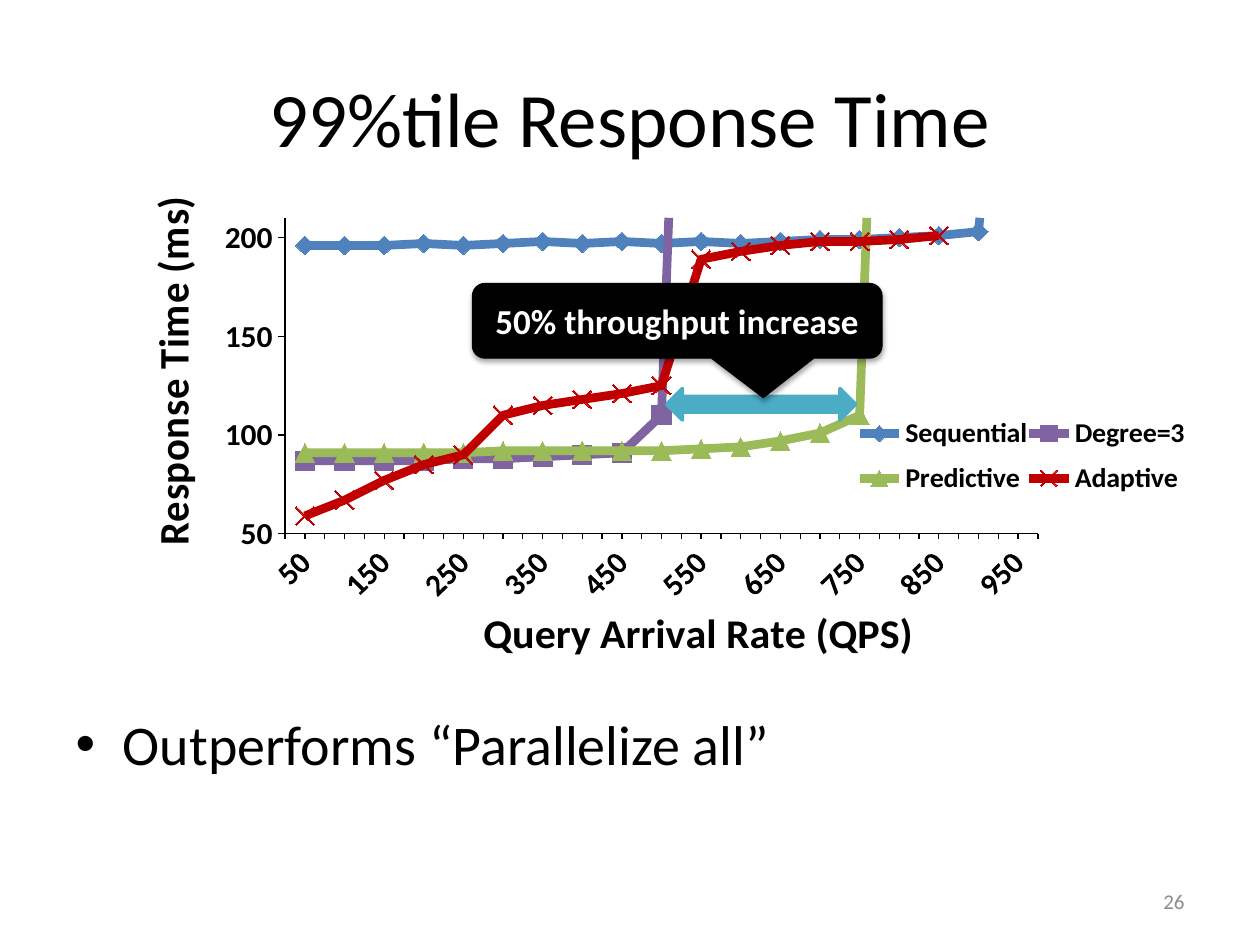
from lxml.etree import SubElement
from pptx import Presentation
from pptx.chart.data import CategoryChartData
from pptx.dml.color import RGBColor
from pptx.enum.chart import XL_CHART_TYPE, XL_LEGEND_POSITION, XL_MARKER_STYLE, XL_TICK_MARK
from pptx.enum.shapes import MSO_SHAPE
from pptx.enum.text import MSO_ANCHOR, PP_ALIGN
from pptx.oxml import parse_xml
from pptx.oxml.ns import nsdecls, qn
from pptx.util import Inches, Pt

rgb = RGBColor.from_string


def cells(*counts):
    """Turn counts of grid cells, twelve to the inch, into lengths."""
    return [Inches(n / 12) for n in counts]


def set_layout(element, index, **shares):
    """Place a chart part by shares of the chart's size."""
    for old in element.findall(qn("c:layout")):
        element.remove(old)
    layout = parse_xml(f"<c:layout {nsdecls('c')}><c:manualLayout/></c:layout>")
    modes = {"xMode": "edge", "yMode": "edge"}
    if index == 0:
        modes = {"layoutTarget": "inner", **modes}
    for tag, value in {**modes, **shares}.items():
        SubElement(layout[0], qn(f"c:{tag}")).set("val", str(value))
    element.insert(index, layout)


prs = Presentation()
prs.slide_width, prs.slide_height = cells(120, 90)
s = prs.slides.add_slide(prs.slide_layouts[1])

# Title, bullet and slide number
title, body = s.placeholders
number = s.shapes.add_textbox(*cells(86, 83.4, 28, 4.8))
for sp, text, size, color, area in [
    (title, "99%tile Response Time", 44, "000000", (6, 3.6, 108, 15)),
    (body, "Outperforms “Parallelize all”", 32, "000000", (6, 67, 108, 18)),
    (number, "26", 12, "8C8C8C", (86, 83.4, 28, 4.8)),
]:
    sp.left, sp.top, sp.width, sp.height = cells(*area)
    tf = sp.text_frame
    tf.text = text
    tf.word_wrap = True
    font = tf.paragraphs[0].runs[0].font
    font.name, font.size, font.color.rgb = "Calibri", Pt(size), rgb(color)
number.text_frame.vertical_anchor = MSO_ANCHOR.MIDDLE
number.text_frame.paragraphs[0].alignment = PP_ALIGN.RIGHT

# Response time chart
series = [
    ("Sequential", "4F81BD", XL_MARKER_STYLE.DIAMOND,
     [196, 196, 196, 197, 196, 197, 198, 197, 198, 197, 198, 197, 198, 199, 199, 200, 201, 203, 410]),
    ("Degree=3", "8064A2", XL_MARKER_STYLE.SQUARE,
     [87, 87, 87, 87, 88, 88, 89, 90, 91, 110, 655]),
    ("Predictive", "9BBB59", XL_MARKER_STYLE.TRIANGLE,
     [91, 91, 91, 91, 91, 92, 92, 92, 92, 92, 93, 94, 97, 101, 110, 655]),
    ("Adaptive", "C00000", XL_MARKER_STYLE.X,
     [59, 67, 77, 85, 90, 110, 115, 118, 121, 125, 189, 193, 196, 198, 198, 199, 201]),
]
data = CategoryChartData()
data.categories = [str(rate) for rate in range(50, 951, 50)]
for name, color, marker, values in series:
    data.add_series(name, values + [None] * (19 - len(values)))
chart = s.shapes.add_chart(XL_CHART_TYPE.LINE_MARKERS, *cells(12, 19, 101, 45), data).chart
chart.has_title = False
chart.font.name, chart.font.size, chart.font.color.rgb = "Calibri", Pt(10), rgb("000000")
chart.plots[0].vary_by_categories = False

for line, (name, color, marker, values) in zip(chart.plots[0].series, series):
    line.smooth = False
    line.format.line.width = Pt(5)
    line.format.line.color.rgb = rgb(color)
    line.marker.style, line.marker.size = marker, 11
    line.marker.format.line.color.rgb = rgb(color)
    if marker == XL_MARKER_STYLE.X:
        line.marker.format.fill.background()
    else:
        line.marker.format.fill.solid()
        line.marker.format.fill.fore_color.rgb = rgb(color)

cat_axis, val_axis = chart.category_axis, chart.value_axis
for axis, text, x, y, turn in [
    (cat_axis, "Query Arrival Rate (QPS)", 0.33, 0.87, 0),
    (val_axis, "Response Time (ms)", 0.01, -0.02, -90),
]:
    axis.has_major_gridlines = False
    axis.format.line.color.rgb = rgb("000000")
    axis.format.line.width = Pt(0.75)
    axis.tick_labels.font.size, axis.tick_labels.font.bold = Pt(18), True
    tf = axis.axis_title.text_frame
    tf.text = text
    font = tf.paragraphs[0].runs[0].font
    font.name, font.size, font.bold, font.color.rgb = "Calibri", Pt(24), True, rgb("000000")
    axis_title = axis.axis_title.element if hasattr(axis.axis_title, "element") else axis.element.find(qn("c:title"))
    axis_title.xpath(".//a:bodyPr")[0].set("rot", str(turn * 60000))
    set_layout(axis_title, 1, x=x, y=y)

val_axis.minimum_scale, val_axis.maximum_scale, val_axis.major_unit = 50, 210, 50
val_axis.major_tick_mark = XL_TICK_MARK.OUTSIDE
cat_axis.major_tick_mark = XL_TICK_MARK.NONE
cat_axis.minor_tick_mark = XL_TICK_MARK.OUTSIDE
cat_xml = chart.element.xpath(".//c:catAx")[0]
cat_xml.find(qn("c:txPr")).find(qn("a:bodyPr")).set("rot", str(-45 * 60000))
cat_xml.find(qn("c:noMultiLvlLbl")).addprevious(
    parse_xml(f'<c:tickLblSkip {nsdecls("c")} val="2"/>'))

chart.has_legend = True
chart.legend.position = XL_LEGEND_POSITION.RIGHT
chart.legend.include_in_layout = False
chart.legend.font.size, chart.legend.font.bold = Pt(16), True
set_layout(chart.element.xpath(".//c:legend")[0], 1, x=0.69, y=0.45, w=0.31, h=0.22)
set_layout(chart.element.xpath(".//c:plotArea")[0], 0, x=0.15, y=0.04, w=0.71, h=0.69)

# Throughput gain: arrow and callout
for kind, area, color, width in [
    (MSO_SHAPE.LEFT_RIGHT_ARROW, (63.5, 37, 18, 3), "4BACC6", 2),
    (MSO_SHAPE.ROUNDED_RECTANGULAR_CALLOUT, (45, 27, 39, 7.1), "000000", 0.75),
]:
    sp = s.shapes.add_shape(kind, *cells(*area))
    sp.shadow.inherit = False
    sp.fill.solid()
    sp.fill.fore_color.rgb = rgb(color)
    sp.line.color.rgb = rgb(color)
    sp.line.width = Pt(width)

callout = sp
callout.adjustments[0], callout.adjustments[1] = 0.21, 1.03
shadow = SubElement(callout.element.spPr.find(qn("a:effectLst")), qn("a:outerShdw"),
                    blurRad=str(Pt(3.1)), dist=str(Pt(1.8)), dir="5400000", rotWithShape="0")
shade = SubElement(shadow, qn("a:srgbClr"), val="000000")
SubElement(shade, qn("a:alpha"), val="35000")
tf = callout.text_frame
tf.text = "50% throughput increase"
tf.word_wrap = True
tf.vertical_anchor = MSO_ANCHOR.MIDDLE
p = tf.paragraphs[0]
p.alignment = PP_ALIGN.CENTER
font = p.runs[0].font
font.name, font.size, font.bold, font.color.rgb = "Calibri", Pt(20), True, rgb("FFFFFF")

prs.save("out.pptx")
